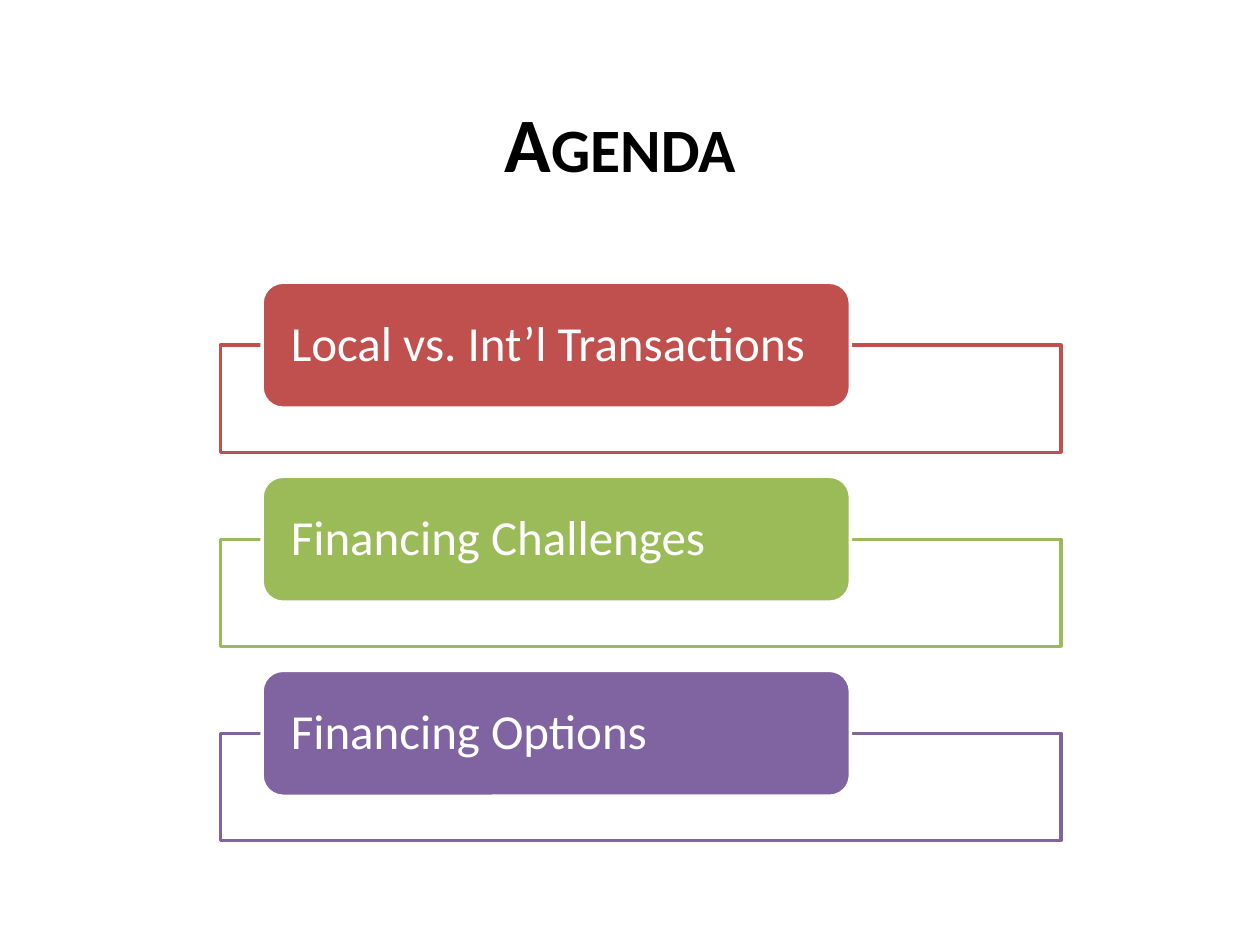
import pptx
import pptx.dml.color
import pptx.enum.shapes
import pptx.enum.text
import pptx.util

Inches = pptx.util.Inches
Pt = pptx.util.Pt
SHAPES = pptx.enum.shapes.MSO_SHAPE
ALIGN = pptx.enum.text.PP_ALIGN

COLORS = {
    "white": "FFFFFF",
    "black": "000000",
    "red": "C0504D",
    "green": "9BBB59",
    "purple": "8064A2",
}
AGENDA = [
    ("Local vs. Int’l Transactions", "red"),
    ("Financing Challenges", "green"),
    ("Financing Options", "purple"),
]
FIRST_TOP = 2.24
ROW_STEP = 1.54


class AgendaSlide:
    """Holds the style and the slide being built."""

    font_name = "Calibri"
    line_width = 2

    def __init__(self, slide):
        self.slide = slide

    def color(self, name):
        return pptx.dml.color.RGBColor.from_string(COLORS[name])

    def add_text(self, shape, text, size, color, align, inset):
        frame = shape.text_frame
        frame.word_wrap = True
        frame.vertical_anchor = pptx.enum.text.MSO_ANCHOR.MIDDLE
        frame.margin_left = frame.margin_right = Inches(inset)
        frame.margin_top = frame.margin_bottom = 0
        paragraph = frame.paragraphs[0]
        paragraph.alignment = align
        paragraph.font.name = self.font_name
        paragraph.font.size = Pt(size)
        paragraph.font.color.rgb = self.color(color)
        run = paragraph.add_run()
        run.text = text
        return paragraph

    def title(self, text, left, top, width, height):
        box = self.slide.shapes.add_textbox(
            Inches(left), Inches(top), Inches(width), Inches(height))
        paragraph = self.add_text(box, text, 44, "black", ALIGN.CENTER, 0.1)
        paragraph.font.bold = True
        # Small capitals have no public property
        paragraph.runs[0]._r.get_or_add_rPr().set("cap", "small")

    def box(self, kind, left, top, width, height, fill, line):
        shape = self.slide.shapes.add_shape(
            kind, Inches(left), Inches(top), Inches(width), Inches(height))
        shape.shadow.inherit = False
        shape.fill.solid()
        shape.fill.fore_color.rgb = self.color(fill)
        shape.line.color.rgb = self.color(line)
        shape.line.width = Pt(self.line_width)
        return shape

    def agenda_item(self, text, color, top):
        # Outlined frame behind the label
        self.box(SHAPES.RECTANGLE, 1.75, top + 0.5, 6.67, 0.85, "white", color)
        # Rounded label
        label = self.box(
            SHAPES.ROUNDED_RECTANGLE, 2.08, top, 4.67, 1, color, "white")
        paragraph = self.add_text(label, text, 28, "white", ALIGN.LEFT, 0.18)
        paragraph.line_spacing = 0.9


def main():
    presentation = pptx.Presentation()
    presentation.slide_width = Inches(10)
    presentation.slide_height = Inches(7.5)
    agenda = AgendaSlide(
        presentation.slides.add_slide(presentation.slide_layouts[6]))

    # Title
    agenda.title("Agenda", 0.42, 0.5, 9, 1.25)

    # Agenda items at equal steps
    for index, (text, color) in enumerate(AGENDA):
        agenda.agenda_item(text, color, FIRST_TOP + index * ROW_STEP)

    presentation.save("out.pptx")


if __name__ == "__main__":
    main()
